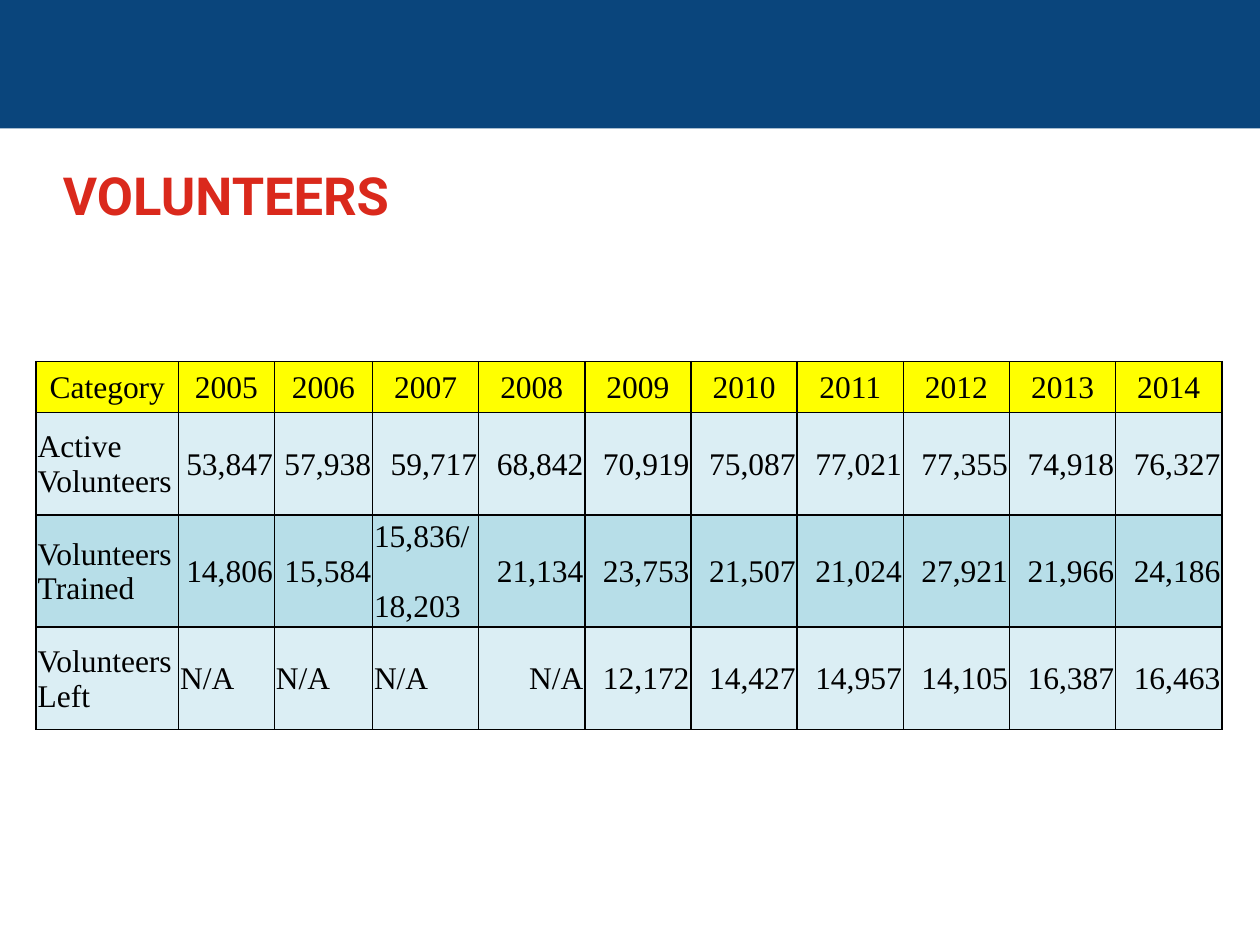
from dataclasses import dataclass

from lxml import etree
from pptx import Presentation
from pptx.dml.color import RGBColor
from pptx.enum import shapes, text
from pptx.oxml import ns
from pptx.util import Cm, Pt

LEFT, MID, RIGHT = text.PP_ALIGN.LEFT, text.PP_ALIGN.CENTER, text.PP_ALIGN.RIGHT
BLUE, RED, BLACK = "0A457C", "DA291C", "000000"
YELLOW, PALE, TEAL = "FFFF00", "DBEEF4", "B7DEE8"
WIDTHS = [2.87, 1.93, 1.98] + [2.14] * 8


@dataclass
class Row:
    label: str
    values: list[str]
    fill: str
    high: float = 2.06
    left: int = 0  # how many leading values are left aligned


YEARS = [str(year) for year in range(2005, 2015)]
ACTIVE = ["53,847", "57,938", "59,717", "68,842", "70,919",
          "75,087", "77,021", "77,355", "74,918", "76,327"]
TRAINED = ["14,806", "15,584", "15,836/\n18,203", "21,134", "23,753",
           "21,507", "21,024", "27,921", "21,966", "24,186"]
GONE = ["N/A"] * 4 + ["12,172", "14,427", "14,957", "14,105", "16,387", "16,463"]
ROWS = [
    Row("Category", YEARS, YELLOW, high=1.03),
    Row("Active Volunteers", ACTIVE, PALE),
    Row("Volunteers Trained", TRAINED, TEAL),
    Row("Volunteers Left", GONE, PALE, left=3),
]


def color(code: str) -> RGBColor:
    return RGBColor.from_string(code)


def write(frame, words: str, *, font: str, size: float, tint: str = BLACK,
          bold: bool = False, align=LEFT, gap: float = 0) -> None:
    """Put one paragraph per line of words, with gap points between them."""
    frame.word_wrap = True
    for i, line in enumerate(words.split("\n")):
        para = frame.add_paragraph() if i else frame.paragraphs[0]
        para.alignment = align
        para.space_before = Pt(gap if i else 0)
        run = para.add_run()
        run.text = line
        run.font.name, run.font.size, run.font.bold = font, Pt(size), bold
        run.font.color.rgb = color(tint)


def border(cell, tint: str = BLACK, width: float = 1) -> None:
    props = cell._tc.get_or_add_tcPr()
    for side in ("lnL", "lnR", "lnT", "lnB"):
        line = etree.SubElement(props, ns.qn(f"a:{side}"), w=str(Pt(width)))
        fill = etree.SubElement(line, ns.qn("a:solidFill"))
        etree.SubElement(fill, ns.qn("a:srgbClr"), val=tint)


def fill_cell(cell, words: str, tint: str, align) -> None:
    border(cell)
    cell.fill.solid()
    cell.fill.fore_color.rgb = color(tint)
    cell.vertical_anchor = text.MSO_ANCHOR.MIDDLE
    cell.margin_left = cell.margin_right = cell.margin_top = Cm(0.03)
    cell.margin_bottom = Cm(0)
    write(cell.text_frame, words, font="Times New Roman", size=18,
          align=align, gap=20)


def add_band(slide) -> None:
    band = slide.shapes.add_shape(shapes.MSO_SHAPE.RECTANGLE,
                                  Cm(0), Cm(0), Cm(25.4), Cm(2.59))
    band.shadow.inherit = False
    band.fill.solid()
    band.fill.fore_color.rgb = color(BLUE)
    band.line.fill.background()


def add_title(slide, words: str) -> None:
    frame = slide.shapes.add_textbox(Cm(1.27), Cm(3.28), Cm(22.86), Cm(2.11)).text_frame
    frame.margin_left = frame.margin_right = Cm(0)
    frame.margin_top = frame.margin_bottom = Cm(0)
    write(frame, words, font="Roboto", size=30, tint=RED, bold=True)


def add_grid(slide, rows: list[Row]) -> None:
    high = sum(row.high for row in rows)
    table = slide.shapes.add_table(len(rows), len(WIDTHS), Cm(0.73), Cm(7.29),
                                   Cm(sum(WIDTHS)), Cm(high)).table
    table.first_row = table.horz_banding = False
    for col, width in zip(table.columns, WIDTHS):
        col.width = Cm(width)
    for r, row in enumerate(rows):
        table.rows[r].height = Cm(row.high)
        for c, words in enumerate([row.label] + row.values):
            if r == 0:
                align = MID
            elif c <= row.left or "\n" in words:
                align = LEFT
            else:
                align = RIGHT
            fill_cell(table.cell(r, c), words, row.fill, align)


def main() -> None:
    deck = Presentation()
    deck.slide_width, deck.slide_height = Cm(25.4), Cm(19.05)
    slide = deck.slides.add_slide(deck.slide_layouts[6])
    add_band(slide)
    add_title(slide, "VOLUNTEERS")
    add_grid(slide, ROWS)
    deck.save("out.pptx")


if __name__ == "__main__":
    main()
